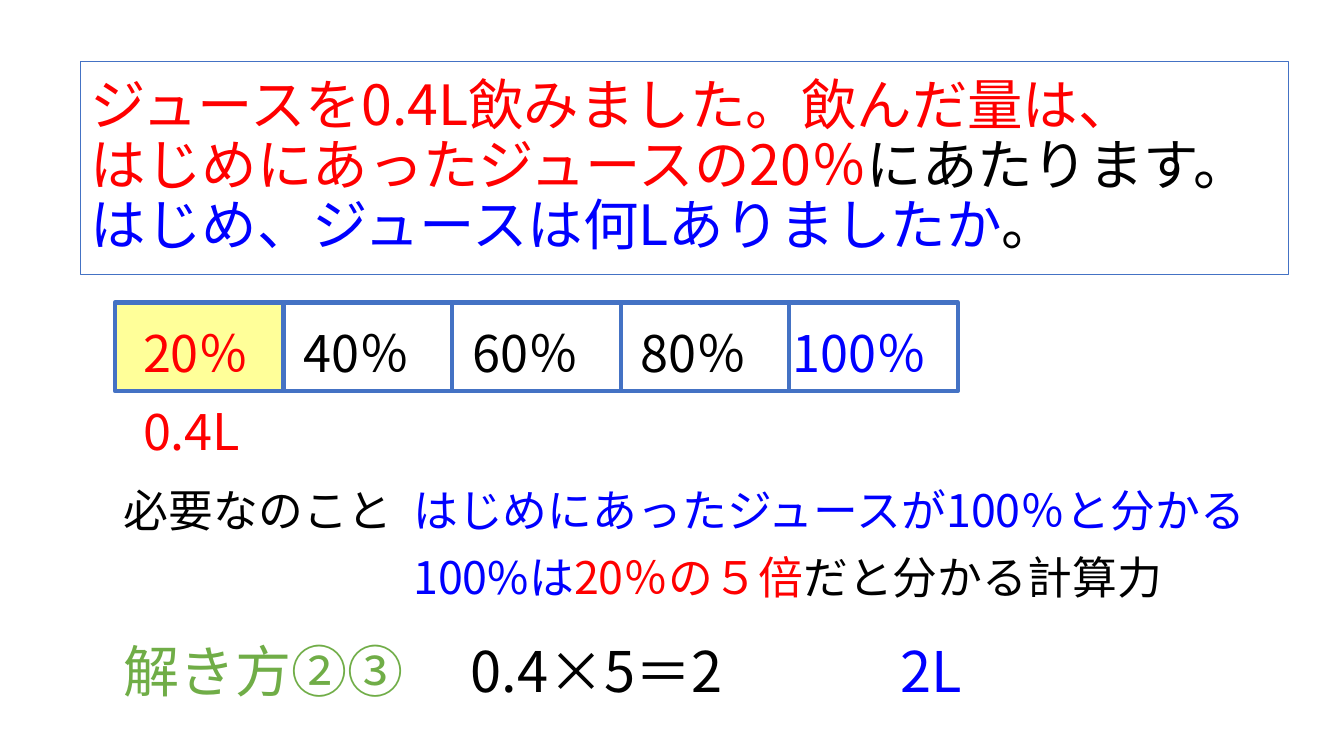
import dataclasses
import typing

import lxml.etree
import pptx
import pptx.dml.color
import pptx.enum.shapes
import pptx.enum.text
import pptx.oxml.ns
import pptx.util

Inches = pptx.util.Inches
FONT = "Noto Sans CJK JP"
RED, BLUE, BLACK, GREEN = "FF0000", "0000FF", "000000", "70AD47"
OUTLINE, HIGHLIGHT = "4472C4", "FFFF99"
BAR_LEFT, BAR_TOP, BAR_WIDTH, BAR_HEIGHT = 1.14, 3, 8.36, 0.88


class Span(typing.NamedTuple):
    text: str
    color: str


@dataclasses.dataclass
class Label:
    left: float
    top: float
    width: float
    height: float
    size: float
    spans: list[Span]
    tabs: tuple[float, ...] = ()


class Portion(typing.NamedTuple):
    text: str
    color: str
    offset: float = 0.1
    width: float = 1.48


QUESTION = [
    Span("ジュースを0.4L飲みました。飲んだ量は、\vはじめにあったジュースの20％", RED),
    Span("にあたります。", BLACK),
    Span("はじめ、ジュースは何Lありましたか", BLUE),
    Span("。", BLACK),
]
PORTIONS = [
    Portion("20％", RED, 0.18),
    Portion("40％", BLACK),
    Portion("60％", BLACK),
    Portion("80％", BLACK),
    Portion("100％", BLUE, -0.07, 1.81),
]
CELL_WIDTH = BAR_WIDTH / len(PORTIONS)
LABELS = [
    Label(1.32, 3.92, 1.59, 0.71, 36, [Span("0.4L", RED)]),
    Label(1.13, 4.74, 2.87, 0.64, 32, [Span("必要なのこと", BLACK)]),
    Label(4, 4.74, 8.78, 0.64, 32, [Span("はじめにあったジュースが100％と分かる", BLUE)]),
    Label(4, 5.4, 8.14, 0.64, 32, [
        Span("100%は", BLUE), Span("20％の５倍", RED), Span("だと分かる計算力", BLACK)]),
    Label(1.13, 6.27, 8.6, 0.77, 40, [
        Span("解き方②③\t", GREEN), Span("0.4×5＝2\t", BLACK), Span("2L", BLUE)], (3.44, 7.7)),
]


def rgb(code: str) -> pptx.dml.color.RGBColor:
    return pptx.dml.color.RGBColor.from_string(code)


def write_spans(para, spans: list[Span], size: float) -> None:
    para.font.name = FONT
    para.font.size = pptx.util.Pt(size)
    defaults = para._p.pPr.find(pptx.oxml.ns.qn("a:defRPr"))
    east_asian = lxml.etree.SubElement(defaults, pptx.oxml.ns.qn("a:ea"))
    east_asian.set("typeface", FONT)
    for span in spans:
        for number, line in enumerate(span.text.split("\v")):
            if number:
                para.add_line_break()
            run = para.add_run()
            run.text = line
            run.font.color.rgb = rgb(span.color)


def set_tabs(para, stops: tuple[float, ...]) -> None:
    tab_list = lxml.etree.Element(pptx.oxml.ns.qn("a:tabLst"))
    for stop in stops:
        tab = lxml.etree.SubElement(tab_list, pptx.oxml.ns.qn("a:tab"))
        tab.set("pos", str(Inches(stop)))
        tab.set("algn", "l")
    para._p.get_or_add_pPr().insert(0, tab_list)


def add_title(page) -> None:
    title = page.shapes.title
    title.left, title.top = Inches(0.8), Inches(0.61)
    title.width, title.height = Inches(11.98), Inches(2.11)
    title.line.color.rgb = rgb(OUTLINE)
    title.line.width = pptx.util.Pt(0.75)
    frame = title.text_frame
    frame.word_wrap = True
    frame.auto_size = pptx.enum.text.MSO_AUTO_SIZE.NONE
    frame.vertical_anchor = pptx.enum.text.MSO_ANCHOR.MIDDLE
    para = frame.paragraphs[0]
    para.alignment = pptx.enum.text.PP_ALIGN.LEFT
    para.line_spacing = 0.9
    write_spans(para, QUESTION, 39.6)


def add_label(page, label: Label) -> None:
    box = page.shapes.add_textbox(
        Inches(label.left), Inches(label.top), Inches(label.width), Inches(label.height))
    frame = box.text_frame
    frame.word_wrap = True
    frame.auto_size = pptx.enum.text.MSO_AUTO_SIZE.SHAPE_TO_FIT_TEXT
    para = frame.paragraphs[0]
    if label.tabs:
        set_tabs(para, label.tabs)
    write_spans(para, label.spans, label.size)


def add_bar(page) -> None:
    bar = page.shapes.add_group_shape()
    for index in range(len(PORTIONS)):
        cell = bar.shapes.add_shape(
            pptx.enum.shapes.MSO_SHAPE.RECTANGLE,
            Inches(BAR_LEFT + index * CELL_WIDTH), Inches(BAR_TOP),
            Inches(CELL_WIDTH), Inches(BAR_HEIGHT))
        cell.shadow.inherit = False
        cell.line.color.rgb = rgb(OUTLINE)
        cell.line.width = pptx.util.Pt(3)
        if index == 0:
            cell.fill.solid()
            cell.fill.fore_color.rgb = rgb(HIGHLIGHT)
        else:
            cell.fill.background()
    for index, portion in enumerate(PORTIONS):
        left = BAR_LEFT + index * CELL_WIDTH + portion.offset
        spans = [Span(portion.text, portion.color)]
        add_label(page, Label(left, BAR_TOP + 0.15, portion.width, 0.71, 36, spans))


def main() -> None:
    """Build the slide on finding the whole amount from a percentage."""
    deck = pptx.Presentation()
    deck.slide_width, deck.slide_height = Inches(13.33), Inches(7.5)
    page = deck.slides.add_slide(deck.slide_layouts[5])
    add_title(page)
    add_bar(page)
    for label in LABELS:
        add_label(page, label)
    deck.save("out.pptx")


if __name__ == "__main__":
    main()
